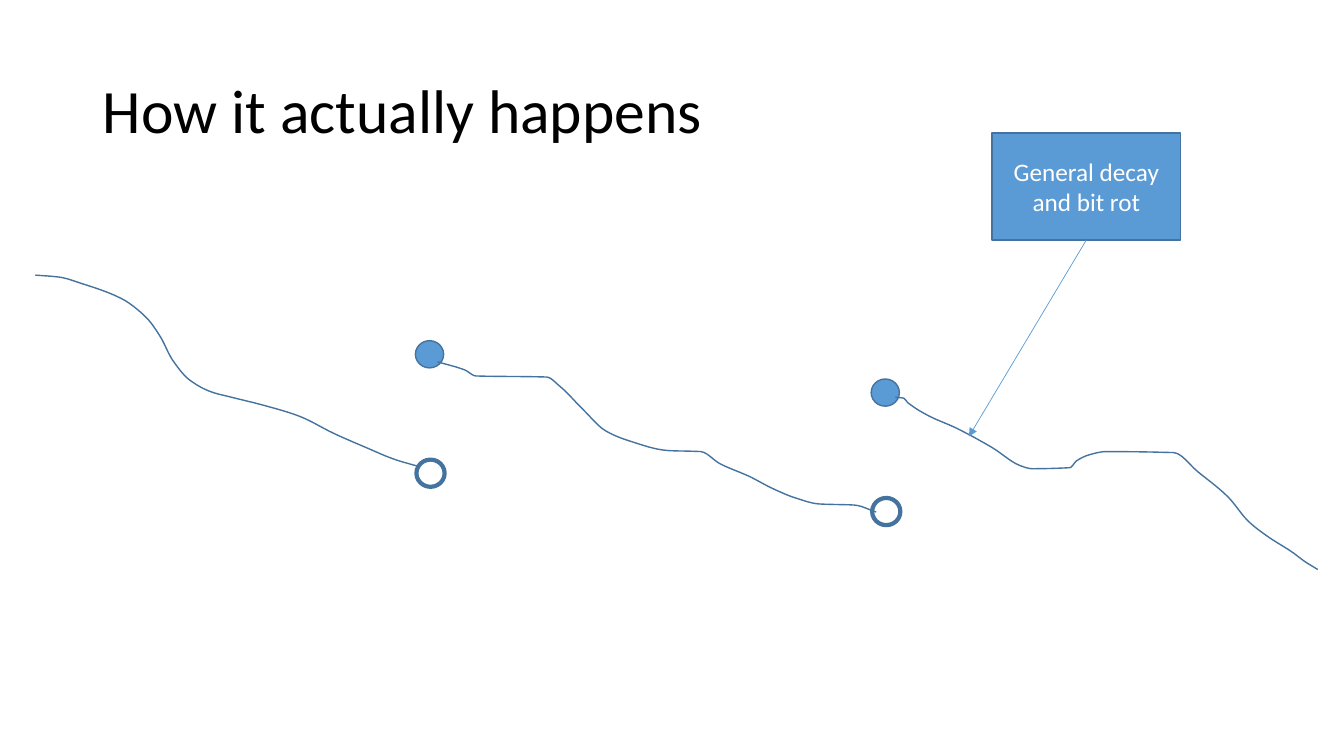
"""Build a slide of a curve that decays between upward jumps, with a callout."""
from itertools import pairwise
from typing import NamedTuple

from lxml.etree import SubElement
from pptx import Presentation
from pptx.dml.color import RGBColor
from pptx.enum.shapes import MSO_CONNECTOR as Connector, MSO_SHAPE as Shape
from pptx.enum.text import MSO_ANCHOR as Anchor, PP_ALIGN as Align
from pptx.oxml.ns import qn
from pptx.util import Inches, Pt

BLUE, DARK_BLUE, WHITE, BLACK = "5B9BD5", "43739E", "FFFFFF", "000000"
FONT = "Calibri"
STEPS_PER_BEND = 6


class Point(NamedTuple):
    x: float
    y: float


class Box(NamedTuple):
    left: float
    top: float
    width: float
    height: float


TITLE_BOX = Box(0.92, 0.4, 11.5, 1.45)
CALLOUT_BOX = Box(9.84, 1.32, 1.87, 1.06)
DECAY_SPOT = Point(9.61, 4.33)

DOT_WIDTH, DOT_HEIGHT = 0.28, 0.27
JUMP_TOPS = [Point(4.12, 3.38), Point(8.64, 3.76)]
JUMP_SHIFT, JUMP_DROP = 0.01, 1.18

DECLINE_BENDS = {
    "before the first jump": [
        (0.35, 2.73), (0.59, 2.75), (0.8, 2.81), (1.2, 2.96), (1.45, 3.15), (1.59, 3.34),
        (1.71, 3.57), (1.88, 3.77), (2.1, 3.89), (2.29, 3.94), (2.61, 4.02), (2.97, 4.13),
        (3.31, 4.3), (3.63, 4.44), (3.92, 4.56), (4.16, 4.63),
    ],
    "between the jumps": [
        (4.34, 3.59), (4.61, 3.67), (4.72, 3.73), (5.42, 3.74), (5.55, 3.83), (5.79, 4.07),
        (6, 4.27), (6.23, 4.37), (6.63, 4.47), (6.95, 4.48), (7.14, 4.6), (7.44, 4.73),
        (7.65, 4.84), (7.89, 4.94), (8.13, 5), (8.47, 5.01), (8.69, 5.08),
    ],
    "after the second jump": [
        (8.88, 3.94), (8.96, 3.95), (9.01, 4), (9.22, 4.13), (9.47, 4.24), (9.84, 4.44),
        (10.12, 4.62), (10.24, 4.65), (10.61, 4.64), (10.68, 4.57), (10.81, 4.51),
        (10.97, 4.48), (11.64, 4.49), (11.88, 4.68), (12.18, 4.93), (12.38, 5.17),
        (12.57, 5.32), (12.82, 5.48), (12.94, 5.57), (13.07, 5.65),
    ],
}


def color(value: str) -> RGBColor:
    """Turn a hex string into a colour."""
    return RGBColor.from_string(value)


def set_line(shape, line_color: str, width: float) -> None:
    """Set the colour and width of a line."""
    shape.line.color.rgb = color(line_color)
    shape.line.width = Pt(width)


def write(shape, text: str, size: float, text_color: str, align: Align):
    """Write one run in the shape and return its paragraph."""
    shape.text_frame.word_wrap = True
    shape.text_frame.vertical_anchor = Anchor.MIDDLE
    paragraph = shape.text_frame.paragraphs[0]
    paragraph.alignment = align
    run = paragraph.add_run()
    run.text = text
    run.font.name = FONT
    run.font.size = Pt(size)
    run.font.color.rgb = color(text_color)
    return paragraph


def add_title(slide, text: str) -> None:
    """Place and format the title."""
    title = slide.shapes.title
    title.left, title.top, title.width, title.height = map(Inches, TITLE_BOX)
    write(title, text, 44, BLACK, Align.LEFT).line_spacing = 0.9


def add_filled(slide, kind: Shape, box: Box, fill: str, line_width: float):
    """Add a filled preset shape with a dark outline."""
    shape = slide.shapes.add_shape(kind, *map(Inches, box))
    shape.shadow.inherit = False
    shape.fill.solid()
    shape.fill.fore_color.rgb = color(fill)
    set_line(shape, DARK_BLUE, line_width)
    return shape


def add_jump(slide, top: Point) -> None:
    """Add the hollow dot where a decline ends and the solid dot where the next begins."""
    hollow = Box(top.x + JUMP_SHIFT, top.y + JUMP_DROP, DOT_WIDTH, DOT_HEIGHT)
    solid = Box(top.x, top.y, DOT_WIDTH, DOT_HEIGHT)
    add_filled(slide, Shape.OVAL, hollow, WHITE, 3)
    add_filled(slide, Shape.OVAL, solid, BLUE, 1)


def bend_slopes(bends: list[Point]) -> list[float]:
    """Give each bend the harmonic mean of its neighbouring slopes, or zero at a turn."""
    slopes = [(b.y - a.y) / (b.x - a.x) for a, b in pairwise(bends)]
    inner = [2 * s * t / (s + t) if s * t > 0 else 0.0 for s, t in pairwise(slopes)]
    return [slopes[0], *inner, slopes[-1]]


def smooth(bends: list[Point]) -> list[Point]:
    """Join the bends by cubic arcs that never overshoot them."""
    points = [bends[0]]
    for (start, slope_in), (end, slope_out) in pairwise(zip(bends, bend_slopes(bends))):
        span = end.x - start.x
        for step in range(1, STEPS_PER_BEND + 1):
            t = step / STEPS_PER_BEND
            rise = t * t * (3 - 2 * t)
            bulge = t * (1 - t) * (slope_in * (1 - t) - slope_out * t)
            y = start.y + rise * (end.y - start.y) + span * bulge
            points.append(Point(start.x + t * span, y))
    return points


def add_decline(slide, bends: list[Point]) -> None:
    """Draw an open smooth curve through the bends."""
    start, *rest = [(Inches(point.x), Inches(point.y)) for point in smooth(bends)]
    builder = slide.shapes.build_freeform(*start)
    builder.add_line_segments(rest, close=False)
    curve = builder.convert_to_shape()
    curve.shadow.inherit = False
    curve.fill.background()
    set_line(curve, DARK_BLUE, 1)


def add_arrow(slide, start: Point, end: Point) -> None:
    """Draw a thin arrow from start to end."""
    arrow = slide.shapes.add_connector(Connector.STRAIGHT, *map(Inches, start + end))
    set_line(arrow, BLUE, 0.5)
    properties = arrow.element.spPr
    SubElement(properties.find(qn("a:ln")), qn("a:tailEnd"), type="triangle")
    SubElement(properties, qn("a:effectLst"))


def add_callout(slide, text: str, box: Box, target: Point) -> None:
    """Add a labelled box with an arrow from its bottom centre to the target."""
    callout = add_filled(slide, Shape.RECTANGLE, box, BLUE, 1)
    write(callout, text, 18, WHITE, Align.CENTER)
    add_arrow(slide, Point(box.left + box.width / 2, box.top + box.height), target)


def main() -> None:
    """Build and save the slide."""
    presentation = Presentation()
    presentation.slide_width, presentation.slide_height = Inches(13.33), Inches(7.5)
    slide = presentation.slides.add_slide(presentation.slide_layouts.get_by_name("Title Only"))
    add_title(slide, "How it actually happens")
    for top in JUMP_TOPS:
        add_jump(slide, top)
    for bends in DECLINE_BENDS.values():
        add_decline(slide, [Point(*bend) for bend in bends])
    add_callout(slide, "General decay and bit rot", CALLOUT_BOX, DECAY_SPOT)
    presentation.save("out.pptx")


if __name__ == "__main__":
    main()
